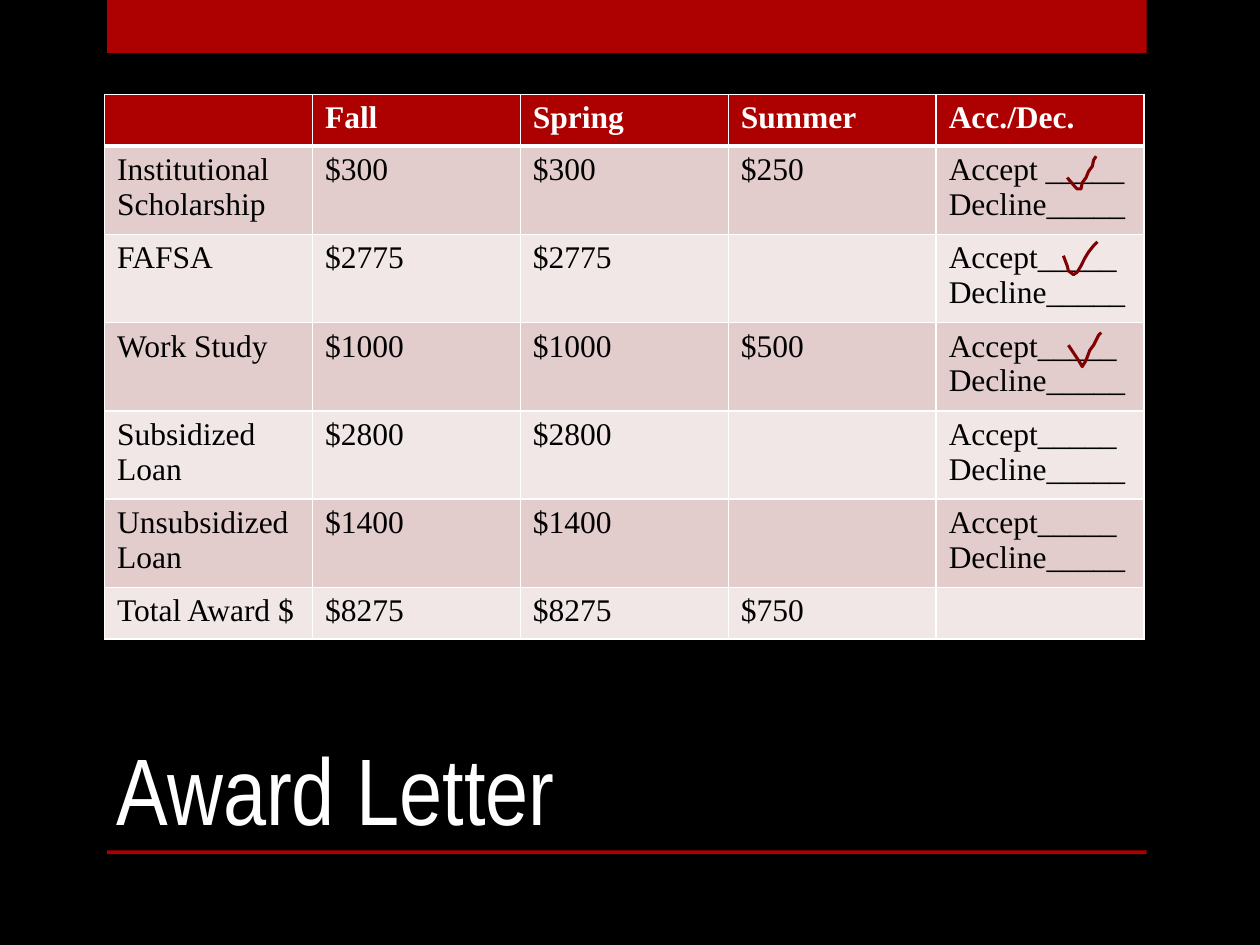
import pptx
import pptx.dml.color
import pptx.enum.shapes
import pptx.enum.text
import pptx.oxml
import pptx.oxml.ns
import pptx.util

Inches = pptx.util.Inches
RGBColor = pptx.dml.color.RGBColor

BLACK = RGBColor(0x00, 0x00, 0x00)
WHITE = RGBColor(0xFF, 0xFF, 0xFF)
RED = RGBColor(0xAD, 0x01, 0x01)
INK = RGBColor(0x80, 0x01, 0x01)
DARK_BAND = RGBColor(0xE3, 0xCC, 0xCC)
LIGHT_BAND = RGBColor(0xF1, 0xE7, 0xE7)

COLUMN_WIDTH = 1.65
ROW_HEIGHT = 0.41

CHOICE = "Accept_____\nDecline_____"
AWARDS = [
    ["", "Fall", "Spring", "Summer", "Acc./Dec."],
    ["Institutional Scholarship", "$300", "$300", "$250",
     "Accept _____\nDecline_____"],
    ["FAFSA", "$2775", "$2775", "", CHOICE],
    ["Work Study", "$1000", "$1000", "$500", CHOICE],
    ["Subsidized Loan", "$2800", "$2800", "", CHOICE],
    ["Unsubsidized Loan", "$1400", "$1400", "", CHOICE],
    ["Total Award $", "$8275", "$8275", "$750", ""],
]

# Pen strokes of the handwritten check marks, in inches
CHECK_MARKS = [
    [(8.47, 1.41), (8.53, 1.48), (8.55, 1.5), (8.58, 1.5), (8.59, 1.45),
     (8.62, 1.41), (8.64, 1.36), (8.67, 1.32), (8.68, 1.27), (8.7, 1.24)],
    [(8.44, 2.03), (8.47, 2.11), (8.48, 2.15), (8.52, 2.18), (8.55, 2.16),
     (8.58, 2.11), (8.61, 2.05), (8.64, 2), (8.68, 1.95), (8.71, 1.92)],
    [(8.48, 2.74), (8.56, 2.86), (8.59, 2.91), (8.62, 2.86), (8.65, 2.78),
     (8.68, 2.74), (8.7, 2.7), (8.72, 2.66), (8.74, 2.64)],
]


def write_text(frame, text, font="Times New Roman", size=18, color=BLACK,
               bold=False):
    """Fill a text frame, one paragraph for each line of text."""
    frame.word_wrap = True
    for index, line in enumerate(text.split("\n")):
        para = frame.add_paragraph() if index else frame.paragraphs[0]
        span = para.add_run()
        span.text = line
        span.font.name = font
        span.font.size = pptx.util.Pt(size)
        span.font.bold = bold
        span.font.color.rgb = color


def add_bar(page, top, height):
    bar = page.shapes.add_shape(
        pptx.enum.shapes.MSO_SHAPE.RECTANGLE,
        Inches(0.85), Inches(top), Inches(8.25), Inches(height))
    bar.shadow.inherit = False
    bar.fill.solid()
    bar.fill.fore_color.rgb = RED
    bar.line.fill.background()


def add_title(page, text):
    box = page.shapes.add_textbox(
        Inches(0.83), Inches(5), Inches(7.42), Inches(1.75))
    box.text_frame.vertical_anchor = pptx.enum.text.MSO_ANCHOR.BOTTOM
    write_text(box.text_frame, text, font="Arial Narrow", size=54, color=WHITE)


def set_borders(cell, top=1, bottom=1):
    """Draw white cell borders; widths are in points."""
    properties = cell._tc.get_or_add_tcPr()
    widths = {"lnL": 1, "lnR": 1, "lnT": top, "lnB": bottom}
    for side, width in widths.items():
        properties.append(pptx.oxml.parse_xml(
            f'<a:{side} {pptx.oxml.ns.nsdecls("a")} w="{pptx.util.Pt(width)}">'
            f'<a:solidFill><a:srgbClr val="{WHITE}"/></a:solidFill>'
            f'</a:{side}>'))


def add_award_table(page, rows):
    row_count, column_count = len(rows), len(rows[0])
    table = page.shapes.add_table(
        row_count, column_count, Inches(0.83), Inches(0.75),
        Inches(COLUMN_WIDTH * column_count),
        Inches(ROW_HEIGHT * row_count)).table
    for column in table.columns:
        column.width = Inches(COLUMN_WIDTH)
    for row_index, values in enumerate(rows):
        table.rows[row_index].height = Inches(ROW_HEIGHT)
        header = row_index == 0
        band = DARK_BAND if row_index % 2 else LIGHT_BAND
        for column_index, value in enumerate(values):
            cell = table.cell(row_index, column_index)
            set_borders(cell, top=3 if row_index == 1 else 1,
                        bottom=3 if header else 1)
            cell.fill.solid()
            cell.fill.fore_color.rgb = RED if header else band
            if value:
                write_text(cell.text_frame, value, bold=header,
                           color=WHITE if header else BLACK)


def add_check_mark(page, points):
    start, *rest = [(Inches(x), Inches(y)) for x, y in points]
    builder = page.shapes.build_freeform(*start)
    builder.add_line_segments(rest, close=False)
    mark = builder.convert_to_shape()
    mark.shadow.inherit = False
    mark.fill.background()
    mark.line.color.rgb = INK
    mark.line.width = pptx.util.Pt(1.75)


def main():
    deck = pptx.Presentation()
    deck.slide_width = Inches(10)
    deck.slide_height = Inches(7.5)
    page = deck.slides.add_slide(deck.slide_layouts[6])
    page.background.fill.solid()
    page.background.fill.fore_color.rgb = BLACK

    # Red bars framing the page
    add_bar(page, top=0, height=0.42)
    add_bar(page, top=6.75, height=0.03)

    # Title and award table
    add_title(page, "Award Letter")
    add_award_table(page, AWARDS)

    # Accepted awards
    for points in CHECK_MARKS:
        add_check_mark(page, points)

    deck.save("out.pptx")


if __name__ == "__main__":
    main()
